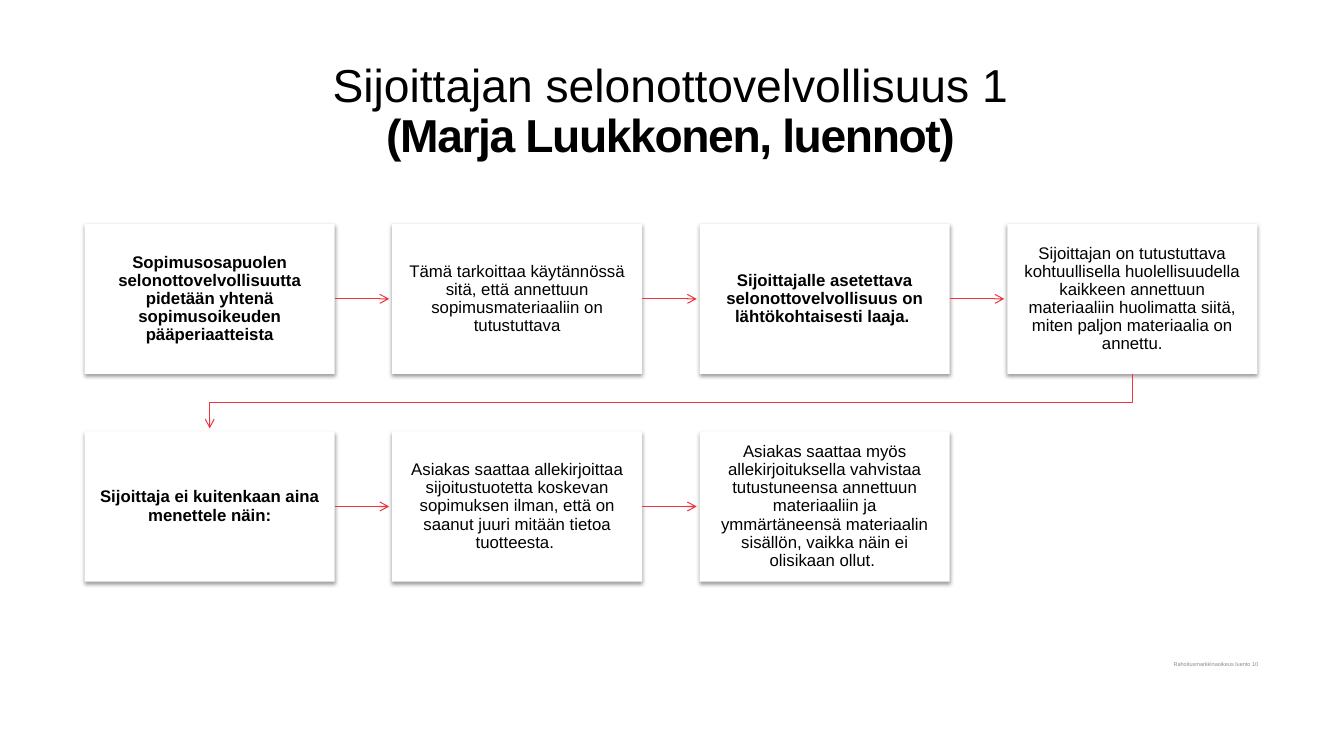
import copy

import lxml.etree
import pptx
import pptx.dml.color
import pptx.enum.shapes
import pptx.enum.text
import pptx.oxml
import pptx.oxml.ns
import pptx.util

Inches = pptx.util.Inches
Pt = pptx.util.Pt
BLACK = pptx.dml.color.RGBColor(0x00, 0x00, 0x00)
WHITE = pptx.dml.color.RGBColor(0xFF, 0xFF, 0xFF)
RED = pptx.dml.color.RGBColor(0xEF, 0x33, 0x40)
GRAY = pptx.dml.color.RGBColor(0x8C, 0x8C, 0x8C)

ALIGN = pptx.enum.text.PP_ALIGN
MIDDLE = pptx.enum.text.MSO_ANCHOR.MIDDLE
SHADOW = (
    f'<a:effectLst {pptx.oxml.ns.nsdecls("a")}>'
    '<a:outerShdw blurRad="39370" dist="20320" dir="5400000" rotWithShape="0">'
    '<a:srgbClr val="000000"><a:alpha val="38000"/></a:srgbClr>'
    '</a:outerShdw></a:effectLst>'
)

COLUMNS = 4
LEFT, TOP = 0.84, 2.22
WIDTH, HEIGHT = 2.48, 1.49
COLUMN_STEP, ROW_STEP = 3.05, 2.06
ARROW_LENGTH = 0.54
STEPS = [
    ("Sopimusosapuolen selonottovelvollisuutta pidetään yhtenä "
     "sopimusoikeuden pääperiaatteista", True),
    ("Tämä tarkoittaa käytännössä sitä, että annettuun "
     "sopimusmateriaaliin on tutustuttava", False),
    ("Sijoittajalle asetettava selonottovelvollisuus on "
     "lähtökohtaisesti laaja. ", True),
    ("Sijoittajan on tutustuttava kohtuullisella huolellisuudella kaikkeen "
     "annettuun materiaaliin huolimatta siitä, miten paljon materiaalia on "
     "annettu.", False),
    ("Sijoittaja ei kuitenkaan aina menettele näin:", True),
    ("Asiakas saattaa allekirjoittaa sijoitustuotetta koskevan sopimuksen "
     "ilman, että on saanut juuri mitään tietoa tuotteesta. ", False),
    ("Asiakas saattaa myös allekirjoituksella vahvistaa tutustuneensa "
     "annettuun materiaaliin ja ymmärtäneensä materiaalin sisällön, vaikka "
     "näin ei olisikaan ollut. ", False),
]


def add_run(paragraph, text, size, color, bold=False):
    run = paragraph.add_run()
    run.text = text
    font_values = {"name": "Arial", "size": Pt(size), "bold": bold}
    for name, value in font_values.items():
        setattr(run.font, name, value)
    run.font.color.rgb = color
    return run


def style_arrow(arrow):
    arrow.line.color.rgb = RED
    arrow.line.width = Pt(0.75)
    properties = arrow._element.spPr
    tail = lxml.etree.SubElement(
        properties.find(pptx.oxml.ns.qn("a:ln")), pptx.oxml.ns.qn("a:tailEnd"))
    tail.set("type", "arrow")
    lxml.etree.SubElement(properties, pptx.oxml.ns.qn("a:effectLst"))


presentation = pptx.Presentation()
presentation.slide_width = Inches(13.33)
presentation.slide_height = Inches(7.5)
slide = presentation.slides.add_slide(presentation.slide_layouts[5])

# Title
title = slide.shapes.title
title_place = {"left": 0.83, "top": 0.53, "width": 11.64, "height": 1.18}
for name, value in title_place.items():
    setattr(title, name, Inches(value))
title.text_frame.auto_size = pptx.enum.text.MSO_AUTO_SIZE.NONE
title.text_frame.vertical_anchor = MIDDLE
paragraph = title.text_frame.paragraphs[0]
paragraph.alignment = ALIGN.CENTER
paragraph.line_spacing = 0.9
heading = add_run(paragraph, "Sijoittajan selonottovelvollisuus 1", 33, BLACK)
paragraph.add_line_break()
line_break = paragraph._p.find(pptx.oxml.ns.qn("a:br"))
line_break.append(copy.deepcopy(heading._r.get_or_add_rPr()))
lecturer = add_run(paragraph, "(Marja Luukkonen, luennot)", 33, BLACK, True)
lecturer._r.get_or_add_rPr().set("spc", "-100")

# Footer
footer = slide.shapes.add_textbox(
    Inches(7.2), Inches(6.51), Inches(5.28), Inches(0.17))
frame_values = {"word_wrap": True, "vertical_anchor": MIDDLE, "margin_right": 0}
for name, value in frame_values.items():
    setattr(footer.text_frame, name, value)
paragraph = footer.text_frame.paragraphs[0]
paragraph.alignment = ALIGN.RIGHT
paragraph.line_spacing = 0.9
add_run(paragraph, "Rahoitusmarkkinaoikeus luento 10", 4, GRAY)

# Step boxes, with an arrow to the next box in the row
box_values = {
    "word_wrap": True, "vertical_anchor": MIDDLE,
    "margin_left": Inches(0.12), "margin_right": Inches(0.12),
    "margin_top": Inches(0.13), "margin_bottom": Inches(0.13),
}
for index, (text, bold) in enumerate(STEPS):
    row, column = divmod(index, COLUMNS)
    left = LEFT + column * COLUMN_STEP
    top = TOP + row * ROW_STEP
    box = slide.shapes.add_shape(
        pptx.enum.shapes.MSO_SHAPE.RECTANGLE,
        Inches(left), Inches(top), Inches(WIDTH), Inches(HEIGHT))
    box.fill.solid()
    box.fill.fore_color.rgb = WHITE
    box.line.fill.background()
    box._element.spPr.append(pptx.oxml.parse_xml(SHADOW))
    for name, value in box_values.items():
        setattr(box.text_frame, name, value)
    paragraph = box.text_frame.paragraphs[0]
    paragraph.alignment = ALIGN.CENTER
    paragraph.line_spacing = 0.9
    add_run(paragraph, text, 12, BLACK, bold)

    if column < COLUMNS - 1 and index < len(STEPS) - 1:
        right, middle = left + WIDTH, top + HEIGHT / 2
        arrow = slide.shapes.add_connector(
            pptx.enum.shapes.MSO_CONNECTOR.STRAIGHT,
            Inches(right), Inches(middle),
            Inches(right + ARROW_LENGTH), Inches(middle))
        arrow.begin_connect(box, 3)
        style_arrow(arrow)

# Bent arrow from the end of the first row to the start of the second
first_center = LEFT + WIDTH / 2
last_center = first_center + (COLUMNS - 1) * COLUMN_STEP
row_bottom = TOP + HEIGHT
bend = row_bottom + 0.28
builder = slide.shapes.build_freeform(Inches(last_center), Inches(row_bottom))
builder.add_line_segments(
    [(Inches(last_center), Inches(bend)),
     (Inches(first_center), Inches(bend)),
     (Inches(first_center), Inches(row_bottom + ARROW_LENGTH))],
    close=False)
row_change = builder.convert_to_shape()
row_change.fill.background()
style_arrow(row_change)

presentation.save("out.pptx")
